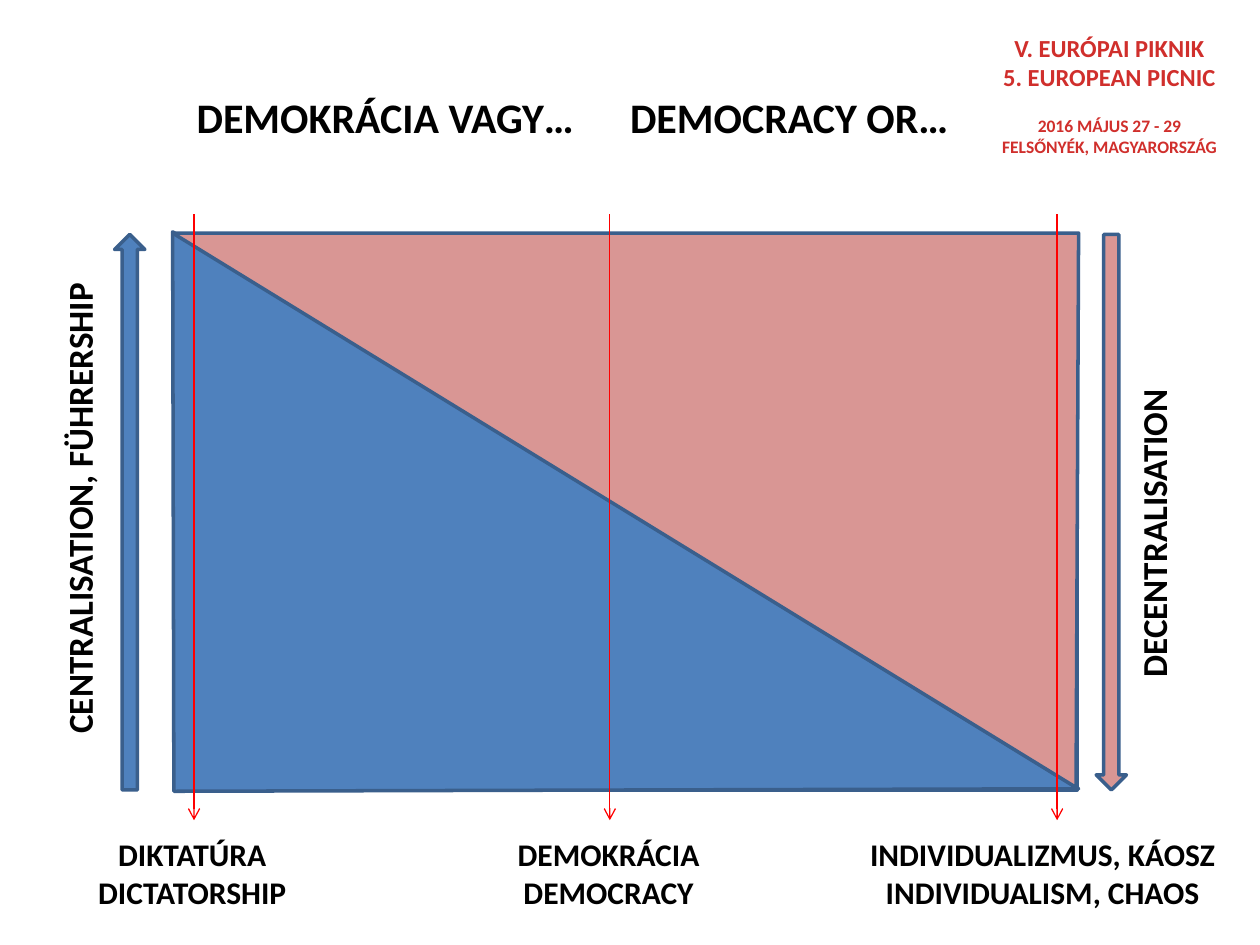
from lxml.etree import SubElement
from pptx import Presentation
from pptx.dml.color import RGBColor as RGB
from pptx.enum.shapes import MSO_CONNECTOR as Conn, MSO_SHAPE as Geo
from pptx.enum.text import MSO_ANCHOR as Anchor, PP_ALIGN as Align
from pptx.oxml.ns import qn
from pptx.util import Inches, Pt

# Content: texts with their boxes (left, top, width, height)
TITLE = ("DEMOKRÁCIA VAGY…\tDEMOCRACY OR…", (1.46, 0.68, 6.23, 0.5))
EVENT = [("V. EURÓPAI PIKNIK", "event", 0), ("5. EUROPEAN PICNIC", "event", 0),
         ("2016 MÁJUS 27 - 29", "date", 13.4), ("FELSŐNYÉK, MAGYARORSZÁG", "date", 0)]
EVENT_BOX = (7.83, 0.21, 1.95, 1.09)
SIDES = [("CENTRALISATION, FÜHRERSHIP", (-1.27, 3.8, 3.8, 0.44)),
         ("DECENTRALISATION", (7.9, 4, 2.51, 0.44))]
STATES = [  # arrow x, label left, label width, lines
    (1.54, 0.67, 1.71, ("DIKTATÚRA", "DICTATORSHIP")),
    (4.84, 4, 1.66, ("DEMOKRÁCIA", "DEMOCRACY")),
    (8.39, 6.79, 2.97, ("INDIVIDUALIZMUS, KÁOSZ", "INDIVIDUALISM, CHAOS")),
]
WEDGES = [("blue", [(1.37, 1.84), (8.56, 6.26), (1.38, 6.28)]),
          ("pink", [(1.37, 1.85), (8.54, 6.25), (8.56, 1.85)])]
TOP, HIGH = 1.86, 4.41
BARS = [(Geo.UP_ARROW, 0.91, "blue"), (Geo.DOWN_ARROW, 8.7, "pink")]

THEME = {
    "font": "Calibri",
    "color": {"blue": "4F81BD", "pink": "D99694", "edge": "3A5F8C",
              "mark": "FF0000", "ink": "000000", "event": "D02F2C"},
    "size": {"title": 24, "side": 20, "state": 18, "event": 14, "date": 10},
}


def tint(name):
    return RGB.from_string(THEME["color"][name])


def box(nums):
    return [Inches(n) for n in nums]


def write(para, text, size, color="ink", **form):
    run = para.add_run()
    run.text = text
    look = {"name": THEME["font"], "size": Pt(THEME["size"][size]), "bold": True}
    for key, val in look.items():
        setattr(run.font, key, val)
    run.font.color.rgb = tint(color)
    for key, val in form.items():
        setattr(para, key, val)


def label(place, rows, color="ink", align=Align.CENTER):
    shape = slide.shapes.add_textbox(*box(place))
    frame = shape.text_frame
    frame.word_wrap = False
    for i, (text, size, gap) in enumerate(rows):
        para = frame.add_paragraph() if i else frame.paragraphs[0]
        write(para, text, size, color, alignment=align, space_before=Pt(gap))
    return shape


def paint(shape, fill=None):
    shape.shadow.inherit = False
    if fill:
        shape.fill.solid()
        shape.fill.fore_color.rgb = tint(fill)
    else:
        shape.fill.background()
    shape.line.color.rgb = tint("edge")
    shape.line.width = Pt(2)


deck = Presentation()
deck.slide_width, deck.slide_height = Inches(10), Inches(7.5)
slide = deck.slides.add_slide(deck.slide_layouts[5])

# Title, its two languages set apart by a tab stop
head = slide.shapes.title
for key, val in zip(("left", "top", "width", "height"), box(TITLE[1])):
    setattr(head, key, val)
head.text_frame.word_wrap = False
head.text_frame.vertical_anchor = Anchor.TOP
para = head.text_frame.paragraphs[0]
write(para, TITLE[0], "title", alignment=Align.LEFT)
tabs = SubElement(para._p.get_or_add_pPr(), qn("a:tabLst"))
SubElement(tabs, qn("a:tab"), pos=str(Inches(3.44)), algn="l")

# Event details
label(EVENT_BOX, EVENT, "event")

# Frame and the two wedges
paint(slide.shapes.add_shape(Geo.RECTANGLE, *box((1.38, TOP, 7.17, HIGH))))
for fill, spots in WEDGES:
    first, *rest = [box(spot) for spot in spots]
    pen = slide.shapes.build_freeform(*first)
    pen.add_line_segments(rest, close=True)
    paint(pen.convert_to_shape(), fill)

# Side arrows and their upright labels
for geo, left, fill in BARS:
    paint(slide.shapes.add_shape(geo, *box((left, TOP, 0.24, HIGH))), fill)
for text, place in SIDES:
    label(place, [(text, "side", 0)], align=Align.LEFT).rotation = 270

# Marker arrows and the states they point to
for x, left, wide, lines in STATES:
    mark = slide.shapes.add_connector(Conn.STRAIGHT, *box((x, 1.7, x, 6.51)))
    mark.line.color.rgb = tint("mark")
    mark.line.width = Pt(0.75)
    SubElement(mark.line._get_or_add_ln(), qn("a:tailEnd"), type="arrow")
    SubElement(mark._element.spPr, qn("a:effectLst"))
    label((left, 6.58, wide, 0.71), [(line, "state", 0) for line in lines])

deck.save("out.pptx")
